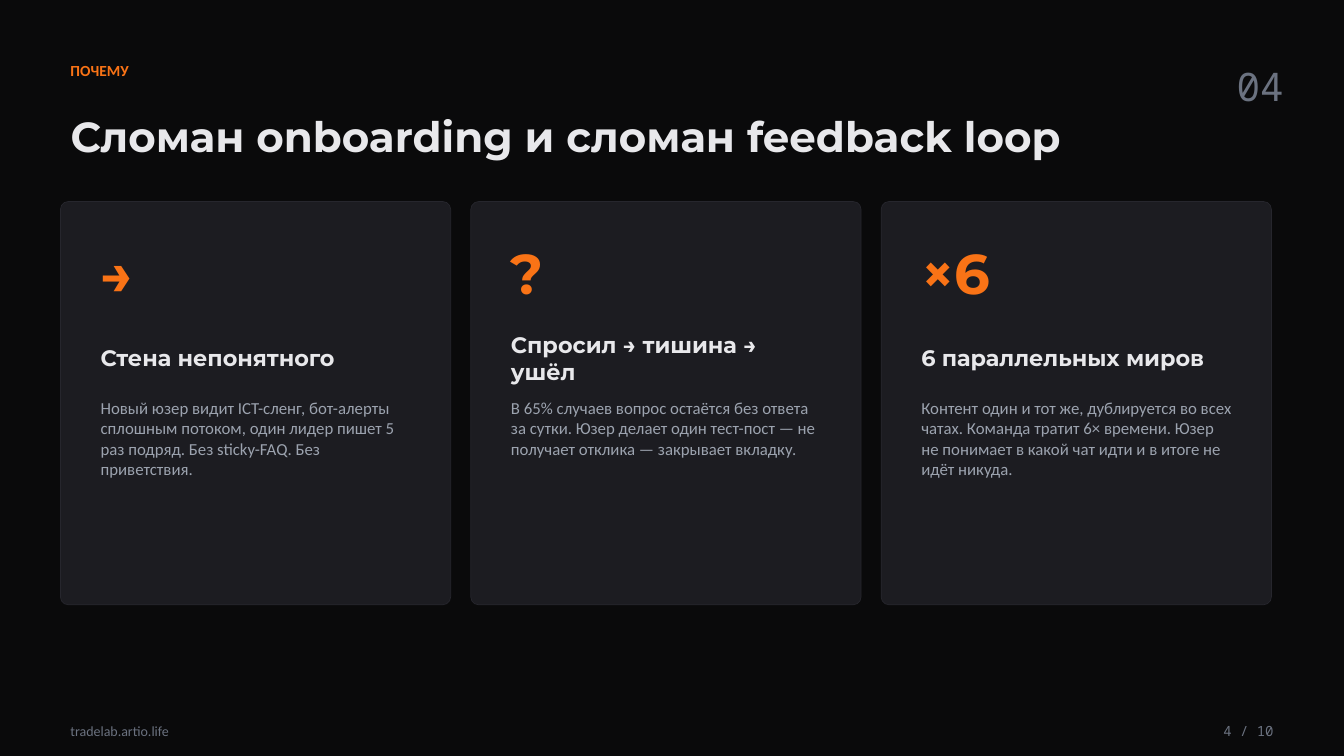
import pptx
import pptx.util
import pptx.dml.color
import pptx.enum.shapes
import pptx.enum.text

PX = 9144  # EMU per px, 100 px to the inch
COLORS = {
    "background": "0A0A0B",
    "card": "1C1C21",
    "border": "26262D",
    "accent": "F97316",
    "heading": "E8E8EB",
    "body": "9CA3AF",
    "muted": "6B7280",
}
HEAD, BODY, MONO = "Montserrat", "Calibri", "Noto Sans Mono"
ALIGN = pptx.enum.text.PP_ALIGN
ANCHOR = pptx.enum.text.MSO_ANCHOR


def rgb(name):
    return pptx.dml.color.RGBColor.from_string(COLORS[name])


def add_text(text, box, size, font, color, bold=False, align=ALIGN.LEFT,
             anchor=ANCHOR.MIDDLE, sp=None):
    left, top, width, height = [v * PX for v in box]
    if sp is None:
        sp = slide.shapes.add_textbox(left, top, width, height)
    else:
        sp.left, sp.top, sp.width, sp.height = left, top, width, height
    tf = sp.text_frame
    tf.word_wrap = True
    tf.auto_size = pptx.enum.text.MSO_AUTO_SIZE.NONE
    tf.vertical_anchor = anchor
    p = tf.paragraphs[0]
    p.alignment = align
    r = p.add_run()
    r.text = text
    r.font.size = pptx.util.Pt(size)
    r.font.name = font
    r.font.bold = bold
    r.font.color.rgb = rgb(color)


prs = pptx.Presentation()
prs.slide_width, prs.slide_height = 1333 * PX, 750 * PX
slide = prs.slides.add_slide(prs.slide_layouts[5])
slide.background.fill.solid()
slide.background.fill.fore_color.rgb = rgb("background")

# Header
add_text("ПОЧЕМУ", (60, 55, 1000, 30), 11, BODY, "accent", bold=True)
add_text("04", (1213, 55, 70, 60), 28, MONO, "muted", align=ALIGN.RIGHT)
add_text("Сломан onboarding и сломан feedback loop", (60, 95, 1213, 80), 30,
         HEAD, "heading", bold=True, sp=slide.shapes.title)

# Reason cards
cards = [
    ("→", "Стена непонятного",
     "Новый юзер видит ICT-сленг, бот-алерты сплошным потоком, один лидер "
     "пишет 5 раз подряд. Без sticky-FAQ. Без приветствия."),
    ("?", "Спросил → тишина → ушёл",
     "В 65% случаев вопрос остаётся без ответа за сутки. Юзер делает один "
     "тест-пост — не получает отклика — закрывает вкладку."),
    ("×6", "6 параллельных миров",
     "Контент один и тот же, дублируется во всех чатах. Команда тратит 6× "
     "времени. Юзер не понимает в какой чат идти и в итоге не идёт никуда."),
]
card_width, card_gap, padding = 387, 20, 30
for i, (symbol, heading, body) in enumerate(cards):
    left = 60 + i * (card_width + card_gap)
    card = slide.shapes.add_shape(
        pptx.enum.shapes.MSO_SHAPE.ROUNDED_RECTANGLE,
        left * PX, 200 * PX, card_width * PX, 400 * PX)
    card.adjustments[0] = 0.02
    card.shadow.inherit = False
    card.fill.solid()
    card.fill.fore_color.rgb = rgb("card")
    card.line.color.rgb = rgb("border")
    card.line.width = pptx.util.Pt(0.5)

    x = left + padding
    add_text(symbol, (x, 230, 100, 80), 40, HEAD, "accent", bold=True)
    add_text(heading, (x, 330, 330, 50), 16, HEAD, "heading", bold=True)
    add_text(body, (x, 390, 330, 200), 12, BODY, "body", anchor=ANCHOR.TOP)

# Footer
add_text("tradelab.artio.life", (60, 710, 400, 30), 10, BODY, "muted")
add_text("4 / 10", (1173, 710, 100, 30), 10, MONO, "muted", align=ALIGN.RIGHT)

prs.save("out.pptx")
